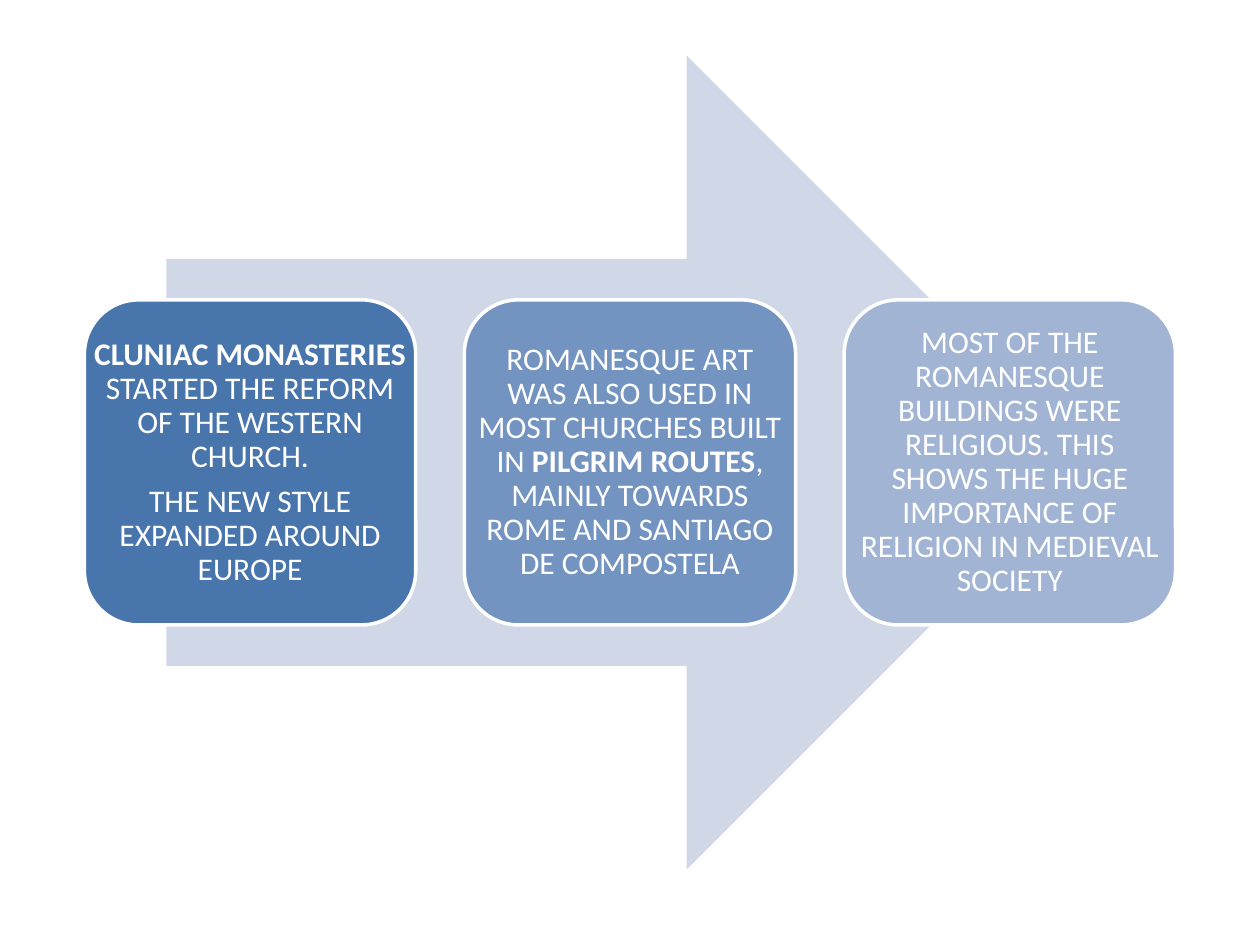
"""Build a slide with three rounded cards on the spread of Romanesque art over a wide arrow."""
from pptx import Presentation
from pptx import util as u
from pptx.dml.color import RGBColor
from pptx.enum import shapes, text


def paint(color_format, hex_color):
    color_format.rgb = RGBColor.from_string(hex_color)


presentation = Presentation()
presentation.slide_width = u.Inches(10)
presentation.slide_height = u.Inches(7.5)
slide = presentation.slides.add_slide(presentation.slide_layouts[6])

card_left, card_top, card_step = u.Inches(0.67), u.Inches(2.38), u.Inches(3.015)
card_width, card_height = u.Inches(2.63), u.Inches(2.58)

arrow = slide.shapes.add_shape(
    shapes.MSO_SHAPE.RIGHT_ARROW, u.Inches(1.32), u.Inches(0.44), u.Inches(7.36), u.Inches(6.46))
arrow.shadow.inherit = False
arrow.fill.solid()
paint(arrow.fill.fore_color, "D0D8E8")
arrow.line.fill.background()

cards = [
    ("4875AC", 0.07, [
        [("CLUNIAC MONASTERIES ", True), ("STARTED THE REFORM OF THE WESTERN CHURCH.", False)],
        [("THE NEW STYLE EXPANDED AROUND EUROPE", False)],
    ]),
    ("7393C1", 0.1, [
        [("ROMANESQUE ART WAS ALSO USED IN MOST CHURCHES BUILT IN ", False),
         ("PILGRIM ROUTES", True),
         (", MAINLY TOWARDS ROME AND SANTIAGO DE COMPOSTELA", False)],
    ]),
    ("A2B4D4", 0.1, [
        [("MOST OF THE ROMANESQUE BUILDINGS WERE RELIGIOUS. THIS SHOWS THE HUGE "
          "IMPORTANCE OF RELIGION IN MEDIEVAL SOCIETY", False)],
    ]),
]

for column, (fill_color, side_inset, paragraphs) in enumerate(cards):
    bounds = card_left + column * card_step, card_top, card_width, card_height
    card = slide.shapes.add_shape(shapes.MSO_SHAPE.ROUNDED_RECTANGLE, *bounds)
    card.shadow.inherit = False
    card.fill.solid()
    paint(card.fill.fore_color, fill_color)
    paint(card.line.color, "FFFFFF")
    card.line.width = u.Pt(2)

    frame = slide.shapes.add_textbox(*bounds).text_frame
    frame.word_wrap = True
    frame.vertical_anchor = text.MSO_ANCHOR.MIDDLE
    frame.margin_left = frame.margin_right = u.Inches(side_inset)
    frame.margin_top = frame.margin_bottom = u.Inches(0.07)
    for index, runs in enumerate(paragraphs):
        paragraph = frame.add_paragraph() if index else frame.paragraphs[0]
        paragraph.alignment = text.PP_ALIGN.CENTER
        paragraph.line_spacing = 0.9
        paragraph.space_after = u.Pt(6.3)
        paragraph.font.name = "Calibri"
        paragraph.font.size = u.Pt(18)
        paint(paragraph.font.color, "FFFFFF")
        for wording, bold in runs:
            run = paragraph.add_run()
            run.text = wording
            run.font.bold = bold

presentation.save("out.pptx")
